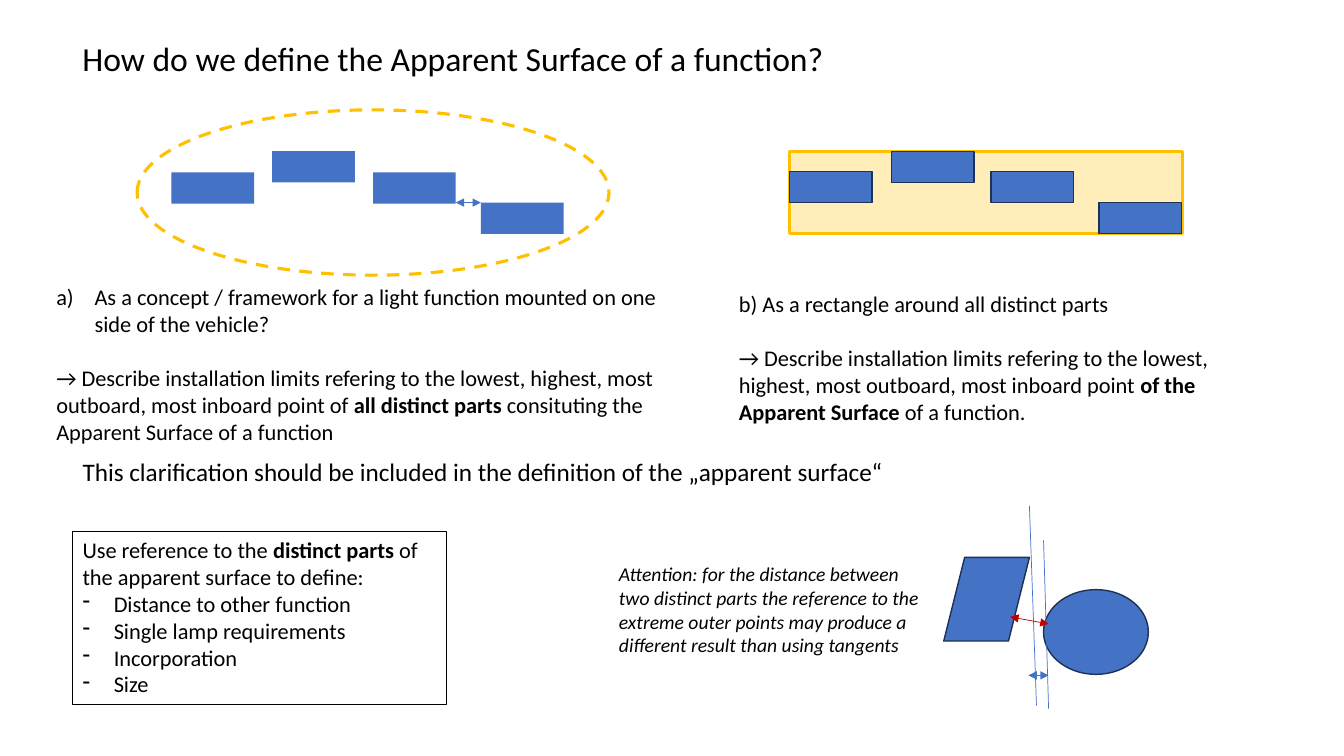
from lxml import etree
from pptx import Presentation
from pptx.dml.color import RGBColor
from pptx.enum.dml import MSO_LINE
from pptx.enum.shapes import MSO_CONNECTOR as Link, MSO_SHAPE as Kind
from pptx.enum.text import MSO_ANCHOR as Anchor, PP_ALIGN as Align
from pptx.oxml.ns import qn
from pptx.util import Inches, Pt

BLUE, NAVY, GOLD, RED, BLACK = "4472C4", "1E3256", "FFC000", "C00000", "000000"
LAMP = (0.82, 0.31)
GAP = 19.5  # one line of 16 pt text

# Lamps: left, top
FREE = [(1.7, 1.71), (2.7, 1.5), (3.7, 1.71), (4.77, 2.01)]
BOXED = [(7.83, 1.7), (8.84, 1.5), (9.83, 1.7), (10.9, 2.01)]

# Lines: start, end, colour, arrows at both ends
LINES = [
    ((4.52, 2.01), (4.77, 2.01), BLUE, True),
    ((10.35, 5.36), (10.4, 7.03), BLUE, False),
    ((10.21, 5.02), (10.28, 7), BLUE, False),
    ((10.02, 6.12), (10.4, 6.19), RED, True),
    ((10.2, 6.7), (10.4, 6.7), BLUE, True),
]

# Paragraphs: text with **bold** parts, then paragraph options
TITLE = [("How do we define the Apparent Surface of a function?", {})]
CLAIM = [("This clarification should be included in the definition of the "
          "„apparent surface“", {})]
IDEA_A = [
    ("As a concept / framework for a light function mounted on one side of "
     "the vehicle?", {"mark": "a)", "indent": 0.38}),
    ("→ Describe installation limits refering to the lowest, highest, most "
     "outboard, most inboard point of **all distinct parts **consituting the "
     "Apparent Surface of a function", {"before": GAP}),
]
IDEA_B = [
    ("b) As a rectangle around all distinct parts", {}),
    ("→ Describe installation limits refering to the lowest, highest, most "
     "outboard, most inboard point **of the Apparent Surface **of a function.",
     {"before": GAP}),
]
USES = [("Use reference to the **distinct parts **of the apparent surface to "
         "define:", {})] + [
    (item, {"mark": "-", "indent": 0.31})
    for item in ("Distance to other function", "Single lamp requirements",
                 "Incorporation", "Size")]
NOTE = [("Attention: for the distance between two distinct parts the reference "
         "to the extreme outer points may produce a different result than "
         "using tangents", {})]

deck = Presentation()
deck.slide_width, deck.slide_height = Inches(13.33), Inches(7.5)
slide = deck.slides.add_slide(deck.slide_layouts[6])
shapes = slide.shapes


def paint(color, code):
    color.rgb = RGBColor.from_string(code)


def add_shape(kind, box, fill=None, line=None, width=1, alpha=None, dash=None):
    shape = shapes.add_shape(kind, *map(Inches, box))
    shape.shadow.inherit = False
    if fill:
        shape.fill.solid()
        paint(shape.fill.fore_color, fill)
    else:
        shape.fill.background()
    if alpha:
        tint = shape.fill._xPr.find(".//" + qn("a:srgbClr"))
        etree.SubElement(tint, qn("a:alpha"), val=str(alpha * 1000))
    if line:
        paint(shape.line.color, line)
        shape.line.width = Pt(width)
        if dash:
            shape.line.dash_style = dash
    else:
        shape.line.fill.background()
    return shape


def add_line(start, end, color, arrows):
    link = shapes.add_connector(Link.STRAIGHT, *map(Inches, start + end))
    paint(link.line.color, color)
    link.line.width = Pt(0.5)
    if arrows:
        for tag in ("a:headEnd", "a:tailEnd"):
            etree.SubElement(link.line._get_or_add_ln(), qn(tag), type="triangle")
    etree.SubElement(link._element.spPr, qn("a:effectLst"))


def add_mark(para, mark, indent):
    """Give a paragraph a hanging bullet or letter."""
    props = para._p.get_or_add_pPr()
    props.set("marL", str(Inches(indent)))
    props.set("indent", str(-Inches(indent)))
    if mark == "a)":
        etree.SubElement(props, qn("a:buAutoNum"), type="alphaLcParenR")
    else:
        etree.SubElement(props, qn("a:buChar"), char=mark)


def add_text(box, paras, size=16, italic=False, line=None):
    if line:
        shape = add_shape(Kind.RECTANGLE, box, line=line, width=0.75)
    else:
        shape = shapes.add_textbox(*map(Inches, box))
    frame = shape.text_frame
    frame.word_wrap = True
    frame.vertical_anchor = Anchor.TOP
    for i, (text, opts) in enumerate(paras):
        para = frame.add_paragraph() if i else frame.paragraphs[0]
        para.alignment = Align.LEFT
        if "before" in opts:
            para.space_before = Pt(opts["before"])
        if "mark" in opts:
            add_mark(para, opts["mark"], opts["indent"])
        for j, part in enumerate(text.split("**")):
            run = para.add_run()
            run.text = part
            font = run.font
            font.name, font.size = "Calibri", Pt(size)
            font.bold, font.italic = j % 2 == 1, italic
            paint(font.color, BLACK)


for spot in FREE:
    add_shape(Kind.RECTANGLE, spot + LAMP, BLUE)
add_shape(Kind.OVAL, (1.36, 1.09, 4.68, 1.64), line=GOLD, width=2.25,
          dash=MSO_LINE.DASH)
add_shape(Kind.RECTANGLE, (7.83, 1.5, 3.9, 0.82), GOLD, GOLD, width=2, alpha=27)
for spot in BOXED:
    add_shape(Kind.RECTANGLE, spot + LAMP, BLUE, NAVY)
add_shape(Kind.PARALLELOGRAM, (9.36, 5.53, 0.85, 0.83), BLUE, NAVY)
add_shape(Kind.OVAL, (10.35, 5.85, 1.04, 0.84), BLUE, NAVY)
for item in LINES:
    add_line(*item)

add_text((0.72, 0.33, 10.84, 0.5), TITLE, size=24)
add_text((0.46, 2.76, 6.25, 1.72), IDEA_A)
add_text((7.23, 2.83, 5.44, 1.45), IDEA_B)
add_text((0.72, 5.27, 3.71, 1.72), USES, line=BLACK)
add_text((6.04, 5.53, 3.18, 1.04), NOTE, size=14, italic=True)
add_text((0.72, 4.48, 11.65, 0.4), CLAIM, size=18)

deck.save("out.pptx")
